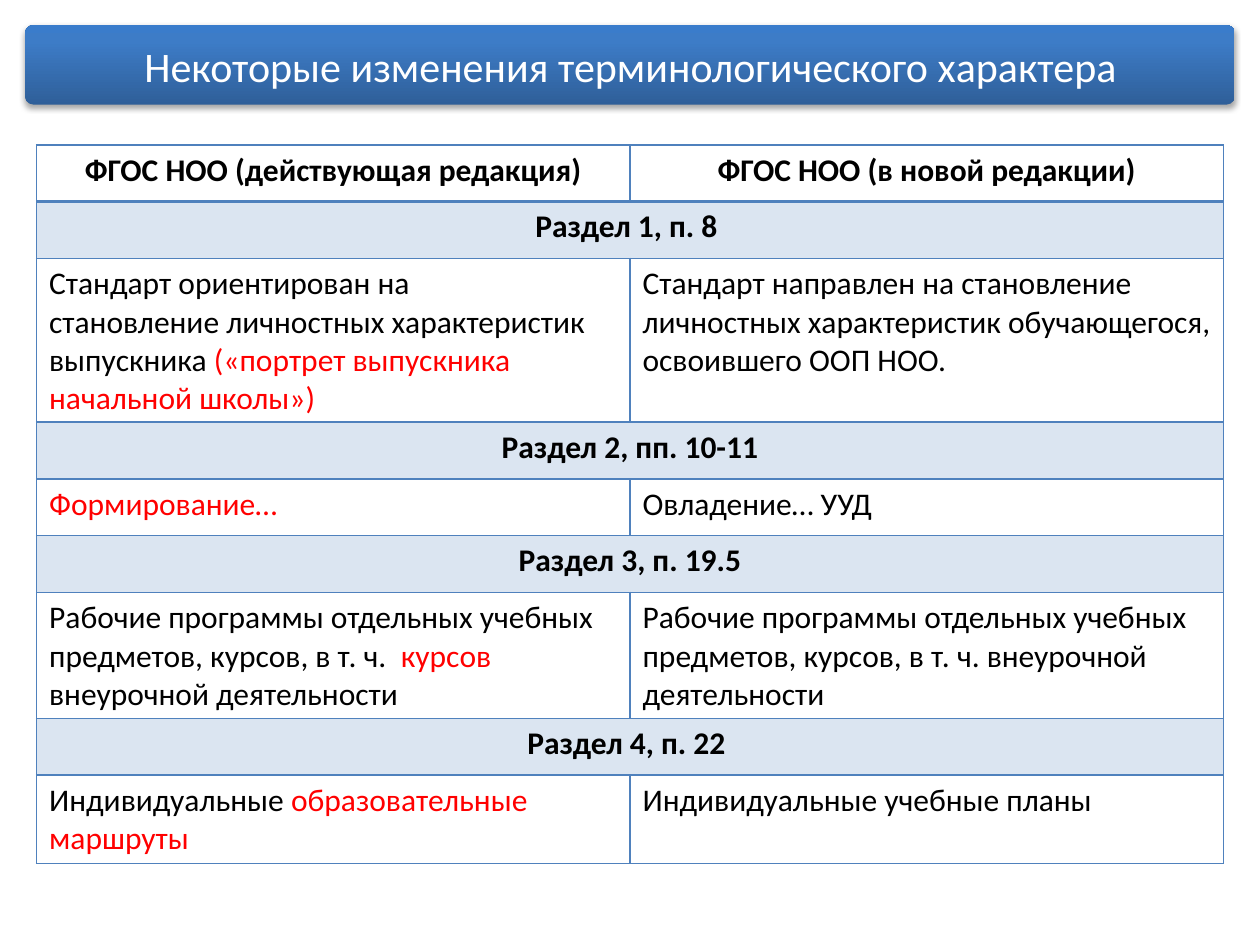
from copy import deepcopy

from lxml.etree import SubElement as Sub
from pptx import Presentation
from pptx.dml.color import RGBColor as RGB
from pptx.enum.shapes import MSO_SHAPE as Shape
from pptx.enum.text import MSO_ANCHOR as Anchor, PP_ALIGN as Align
from pptx.oxml.ns import qn
from pptx.util import Inches, Pt

BLACK = RGB(0x00, 0x00, 0x00)
WHITE = RGB(0xFF, 0xFF, 0xFF)
RED = RGB(0xFF, 0x00, 0x00)
BLUE = RGB(0x4F, 0x81, 0xBD)
STOPS = [
    (0, RGB(0x2F, 0x5F, 0x99)),
    (0.8, RGB(0x3D, 0x7C, 0xC7)),
    (1, RGB(0x3A, 0x7C, 0xCB)),
]

BODY = {"name": "Calibri", "size": Pt(18), "bold": False}
BOLD = {**BODY, "bold": True}
HEAD = {"name": "Calibri", "size": Pt(24)}

TITLE = "Некоторые изменения терминологического характера"
NAMES = ("ФГОС НОО (действующая редакция)", "ФГОС НОО (в новой редакции)")
# Each section has a heading, the old wording and the new one.
# Bars enclose the words shown in red.
PARTS = [
    (
        "Раздел 1, п. 8 ",
        "Стандарт ориентирован на\nстановление личностных характеристик "
        "выпускника |(«портрет выпускника начальной школы»)|",
        "Стандарт направлен на становление личностных характеристик "
        "обучающегося, освоившего ООП НОО.",
    ),
    ("Раздел 2, пп. 10-11", "|Формирование…|", "Овладение… УУД"),
    (
        "Раздел 3, п. 19.5",
        "Рабочие программы отдельных учебных предметов, курсов, "
        "в т. ч.  |курсов| внеурочной деятельности",
        "Рабочие программы отдельных учебных\n"
        "предметов, курсов, в т. ч. внеурочной деятельности",
    ),
    (
        "Раздел 4, п. 22 ",
        "Индивидуальные |образовательные маршруты|",
        "Индивидуальные учебные планы",
    ),
]


def put(frame, text, style, color=BLACK, align=Align.LEFT):
    """Write lines of text, with the words between bars in red."""
    for i, line in enumerate(text.split("\n")):
        para = frame.paragraphs[0] if i == 0 else frame.add_paragraph()
        para.alignment = align
        for j, piece in enumerate(line.split("|")):
            if not piece:
                continue
            run = para.add_run()
            run.text = piece
            for key, value in style.items():
                setattr(run.font, key, value)
            run.font.color.rgb = RED if j % 2 else color


def shade(shape):
    """Give the shape a soft shadow that falls straight down."""
    shape.shadow.inherit = False
    glow = shape._element.spPr.find(qn("a:effectLst"))
    drop = Sub(glow, qn("a:outerShdw"), blurRad=str(Pt(3.1)),
               dist=str(Pt(1.8)), dir="5400000", rotWithShape="0")
    color = Sub(drop, qn("a:srgbClr"), val=str(BLACK))
    Sub(color, qn("a:alpha"), val="35000")


def add_bar(slide):
    bar = slide.shapes.add_shape(
        Shape.ROUNDED_RECTANGLE,
        Inches(0.2), Inches(0.2), Inches(9.6), Inches(0.63))
    bar.adjustments[0] = 0.1
    bar.line.fill.background()
    bar.fill.gradient()
    bar.fill.gradient_angle = 90
    stops = bar._element.spPr.find(".//" + qn("a:gsLst"))
    stops.append(deepcopy(stops[-1]))
    for stop, (place, color) in zip(bar.fill.gradient_stops, STOPS):
        stop.position = place
        stop.color.rgb = color
    shade(bar)


def add_title(slide):
    box = slide.shapes.add_textbox(
        Inches(0.23), Inches(0.22), Inches(9.55), Inches(0.6))
    frame = box.text_frame
    form = {
        "word_wrap": True, "vertical_anchor": Anchor.MIDDLE,
        "margin_left": Inches(0.06), "margin_right": Inches(0.06),
        "margin_top": Inches(0.04), "margin_bottom": Inches(0.04),
    }
    for key, value in form.items():
        setattr(frame, key, value)
    put(frame, TITLE, HEAD, WHITE, Align.CENTER)


def edge(cell, base=1):
    """Draw the cell's borders; base is the width of the lower one."""
    props = cell._tc.get_or_add_tcPr()
    sides = {"lnL": 1, "lnR": 1, "lnT": 1, "lnB": base}
    for i, (side, width) in enumerate(sides.items()):
        line = Sub(props, qn("a:" + side), w=str(Pt(width)))
        props.insert(i, line)
        fill = Sub(line, qn("a:solidFill"))
        Sub(fill, qn("a:srgbClr"), val=str(BLUE))


def tint(cell):
    cell.fill.solid()
    cell.fill.fore_color.rgb = BLUE
    color = cell._tc.tcPr.find(".//" + qn("a:srgbClr"))
    Sub(color, qn("a:alpha"), val="20000")


def add_grid(slide):
    count = 1 + 2 * len(PARTS)
    grid = slide.shapes.add_table(
        count, 2, Inches(0.29), Inches(1.15),
        Inches(9.42), Inches(0.45 * count)).table
    grid.first_row = grid.horz_banding = False
    for cell in grid.iter_cells():
        cell.fill.background()
    for col, name in enumerate(NAMES):
        put(grid.cell(0, col).text_frame, name, BOLD, align=Align.CENTER)
    for i, (head, *texts) in enumerate(PARTS):
        row = 1 + 2 * i
        band = grid.cell(row, 0)
        band.merge(grid.cell(row, 1))
        tint(band)
        put(band.text_frame, head, BOLD, align=Align.CENTER)
        for col, text in enumerate(texts):
            put(grid.cell(row + 1, col).text_frame, text, BODY)
    for i, cell in enumerate(grid.iter_cells()):
        edge(cell, 2 if i < 2 else 1)


def main():
    deck = Presentation()
    deck.slide_width, deck.slide_height = Inches(10), Inches(7.5)
    slide = deck.slides.add_slide(deck.slide_layouts[6])
    add_bar(slide)
    add_title(slide)
    add_grid(slide)
    deck.save("out.pptx")


if __name__ == "__main__":
    main()
